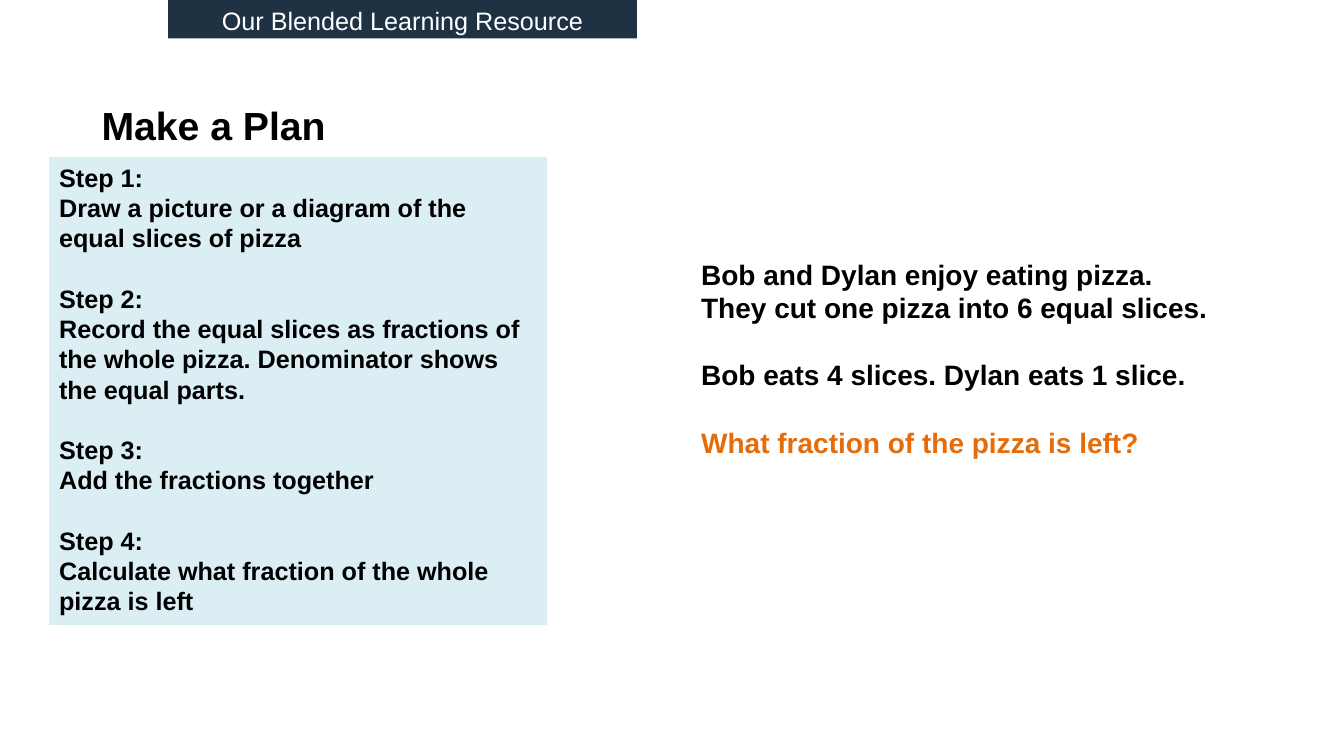
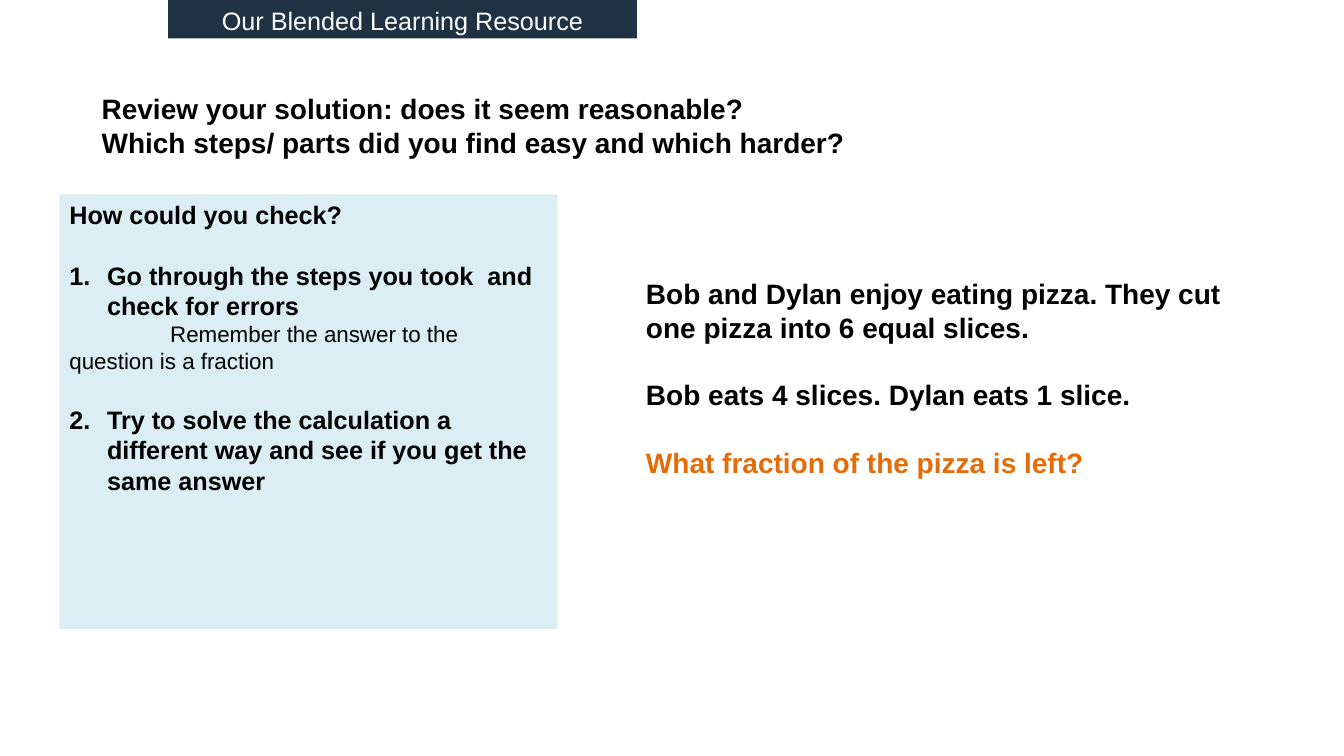
from dataclasses import dataclass

from lxml.etree import SubElement
from pptx import Presentation
from pptx.dml.color import RGBColor
from pptx.enum.shapes import MSO_SHAPE as Preset
from pptx.enum.text import MSO_ANCHOR as Anchor, PP_ALIGN as Align
from pptx.oxml.ns import qn
from pptx.util import Cm, Pt

FONT = "Arial"
COLORS = {"black": "000000", "white": "FFFFFF", "navy": "1F3244",
          "pale": "DBEEF4", "orange": "E46C0A"}
LINE_HEIGHT = 1.2
NUMBER_INDENT = Cm(0.95)


@dataclass(frozen=True)
class Line:
    text: str
    size: float = 18
    bold: bool = True
    color: str = "black"
    gap: bool = False
    number: int = 0
    first_indent: float = 0
    align: Align = Align.LEFT


@dataclass(frozen=True)
class Area:
    left: float
    top: float
    width: float
    height: float

    def lengths(self) -> tuple:
        return Cm(self.left), Cm(self.top), Cm(self.width), Cm(self.height)


@dataclass(frozen=True)
class Page:
    title: Line
    panel: Area
    panel_lines: list[Line]
    problem: Area


TITLE = Area(2.31, 2.34, 22.86, 1.63)
BAND = Area(4.24, 0, 11.81, 0.97)

PROBLEM_LINES = [
    Line("Bob and Dylan enjoy eating pizza. They cut one pizza into 6 equal slices.", 20),
    Line("Bob eats 4 slices. Dylan eats 1 slice.", 20, gap=True),
    Line("What fraction of the pizza is left?", 20, color="orange", gap=True),
]

STEPS = [
    "Draw a picture or a diagram of the equal slices of pizza",
    "Record the equal slices as fractions of the whole pizza. "
    "Denominator shows the equal parts.",
    "Add the fractions together",
    "Calculate what fraction of the whole pizza is left",
]
STEP_LINES = [
    line
    for number, step in enumerate(STEPS, 1)
    for line in (Line(f"Step {number}:", gap=number > 1), Line(step))
]

CHECK_LINES = [
    Line("How could you check?"),
    Line("Go through the steps you took  and check for errors", gap=True, number=1),
    Line("Remember the answer to the\vquestion is a fraction", 16, bold=False,
         first_indent=2.54),
    Line("Try to solve the calculation a different way and see if you get "
         "the same answer", gap=True, number=2),
]

PAGES = [
    Page(Line("Make a Plan", 28),
         Area(1.24, 3.96, 12.55, 11.79), STEP_LINES,
         Area(17.42, 6.35, 13.49, 6.15)),
    Page(Line("Review your solution: does it seem reasonable?\v"
              "Which steps/ parts did you find easy and which harder?", 20),
         Area(1.5, 4.9, 12.55, 10.95), CHECK_LINES,
         Area(16.03, 6.85, 15.49, 6.15)),
]


def rgb(name: str) -> RGBColor:
    return RGBColor.from_string(COLORS[name])


def write_lines(frame, lines: list[Line], *, anchor: Anchor = Anchor.TOP) -> None:
    frame.word_wrap = True
    frame.vertical_anchor = anchor
    frame.margin_left = frame.margin_right = Cm(0.25)
    frame.margin_top, frame.margin_bottom = Cm(0.13), Cm(0)
    if anchor == Anchor.MIDDLE:
        frame.margin_bottom = frame.margin_top
    for index, line in enumerate(lines):
        para = frame.add_paragraph() if index else frame.paragraphs[0]
        para.text = line.text
        properties = para._p.get_or_add_pPr()
        if line.number:
            properties.set("marL", str(NUMBER_INDENT))
            properties.set("indent", str(-NUMBER_INDENT))
            SubElement(properties, qn("a:buAutoNum"), type="arabicPeriod",
                       startAt=str(line.number))
        elif line.first_indent:
            properties.set("indent", str(Cm(line.first_indent)))
        para.alignment = line.align
        para.line_spacing = Pt(line.size * LINE_HEIGHT)
        para.space_before = Pt(line.size * LINE_HEIGHT if line.gap else 0)
        for span in para.runs:
            span.font.name = FONT
            span.font.size = Pt(line.size)
            span.font.bold = line.bold
            span.font.color.rgb = rgb(line.color)


def add_panel(page, area: Area, lines: list[Line], *, fill: str) -> None:
    box = page.shapes.add_shape(Preset.RECTANGLE, *area.lengths())
    box.shadow.inherit = False
    box.fill.solid()
    box.fill.fore_color.rgb = rgb(fill)
    box.line.fill.background()
    write_lines(box.text_frame, lines)


def build_page(deck, content: Page) -> None:
    page = deck.slides.add_slide(deck.slide_layouts[5])
    title = page.shapes.title
    title.left, title.top, title.width, title.height = TITLE.lengths()
    write_lines(title.text_frame, [content.title], anchor=Anchor.MIDDLE)
    add_panel(page, content.panel, content.panel_lines, fill="pale")
    band_line = Line("Our Blended Learning Resource", bold=False, color="white",
                     align=Align.CENTER)
    add_panel(page, BAND, [band_line], fill="navy")
    problem = page.shapes.add_textbox(*content.problem.lengths())
    write_lines(problem.text_frame, PROBLEM_LINES)


def main() -> None:
    deck = Presentation()
    deck.slide_width, deck.slide_height = Cm(33.87), Cm(19.05)
    for content in PAGES:
        build_page(deck, content)
    deck.save("out.pptx")


if __name__ == "__main__":
    main()
